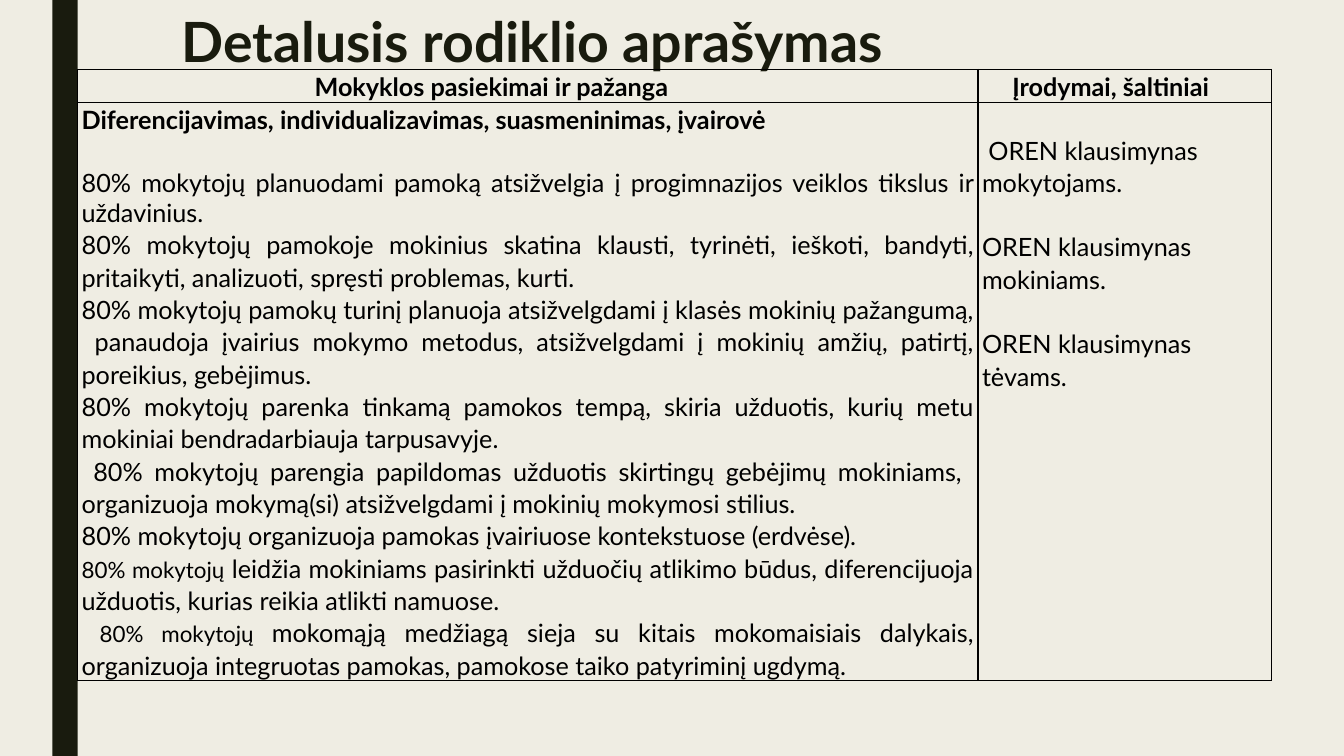
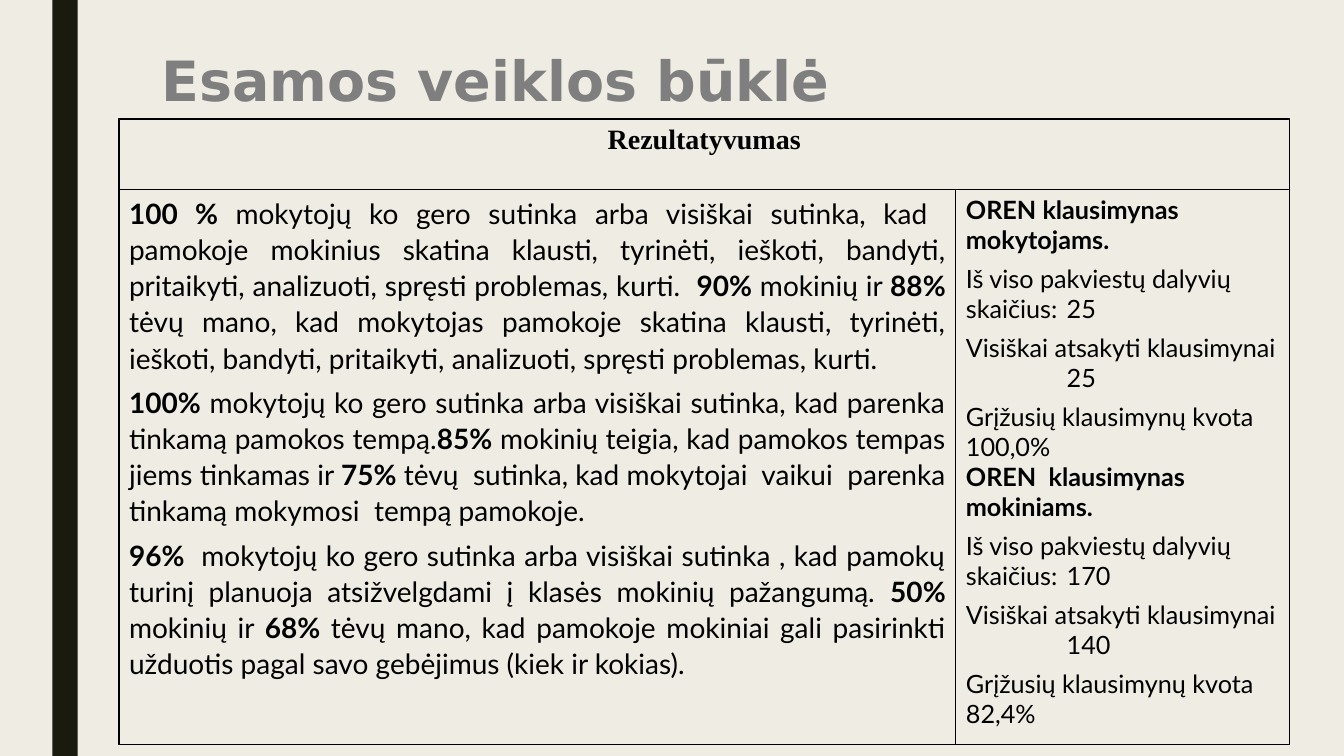
from pptx import Presentation
from pptx.dml.color import RGBColor
from pptx.enum.shapes import MSO_SHAPE
from pptx.enum.text import MSO_ANCHOR, PP_ALIGN
from pptx.oxml import parse_xml
from pptx.oxml.ns import nsdecls
from pptx.util import Inches, Pt

WIDE, HIGH = 13.33, 7.5
THEME = {
    "paper": RGBColor.from_string("EFEDE3"),
    "dark": RGBColor.from_string("191B0E"),
    "grey": RGBColor.from_string("7F7F7F"),
    "ink": RGBColor.from_string("000000"),
    "sans": "Lato",
    "title": Pt(39.6),
}
LEFT, MID, FULL = PP_ALIGN.LEFT, PP_ALIGN.CENTER, PP_ALIGN.JUSTIFY
BOLD, SMALL = {"bold": True}, {"size": Pt(16)}


def style(size, bold=False, alt=BOLD, face=THEME["sans"], align=LEFT, line=1.0, gap=0):
    font = {"name": face, "size": Pt(size), "bold": bold}
    para = {"alignment": align, "line_spacing": line, "space_before": Pt(gap)}
    return {"font": font, "para": para, "alt": alt}


STYLES = {
    "head": style(18, True, line=1.07),
    "goal": style(18, alt=SMALL, align=FULL, line=1.07),
    "first": style(18, align=FULL, gap=23),
    "proof": style(18, line=1.07),
    "next": style(18, line=1.07, gap=23),
    "band": style(20, True, face="Times New Roman", align=MID),
    "fact": style(20, align=FULL, line=1.07, gap=6),
    "lead": style(18, True, gap=6),
    "tight": style(18, True),
    "note": style(18, gap=6),
}


def survey(who, total, done, share):
    return who + [
        ("note", f"Iš viso pakviestų dalyvių skaičius: \t{total}"),
        ("note", f"Visiškai atsakyti klausimynai \t{done}"),
        ("note", f"Grįžusių klausimynų kvota \t{share}"),
    ]


SLIDES = [
    {
        "title": "Detalusis rodiklio aprašymas",
        "look": ("Lato", "dark"),
        "box": (1.7, 0.1, 10.5, 0.69),
        "at": (0.77, 0.69),
        "cols": (8.93, 2.91),
        "rows": (0.33, 5.71),
        "pad": (0.04, 0),
        "shift": {(0, 0): {"margin_left": 2.35}, (0, 1): {"margin_left": 0.34},
                  (1, 1): {"margin_top": 0.3}},
        "cells": [
            [[("head", "Mokyklos pasiekimai ir pažanga")],
             [("head", "Įrodymai, šaltiniai")]],
            [[
                ("head", "Diferencijavimas, individualizavimas, suasmeninimas, įvairovė"),
                ("first", "80% mokytojų planuodami pamoką atsižvelgia į progimnazijos veiklos tikslus ir uždavinius."),
                ("goal", "80% mokytojų pamokoje mokinius skatina klausti, tyrinėti, ieškoti, bandyti, pritaikyti, analizuoti, spręsti problemas, kurti."),
                ("goal", "80% mokytojų pamokų turinį planuoja atsižvelgdami į klasės mokinių pažangumą,  panaudoja įvairius mokymo metodus, atsižvelgdami į mokinių amžių, patirtį, poreikius, gebėjimus."),
                ("goal", "80% mokytojų parenka tinkamą pamokos tempą, skiria užduotis, kurių metu mokiniai bendradarbiauja tarpusavyje."),
                ("goal", " 80% mokytojų parengia papildomas užduotis skirtingų gebėjimų mokiniams,  organizuoja mokymą(si) atsižvelgdami į mokinių mokymosi stilius."),
                ("goal", "80% mokytojų organizuoja pamokas įvairiuose kontekstuose (erdvėse)."),
                ("goal", "*80% mokytojų* leidžia mokiniams pasirinkti užduočių atlikimo būdus, diferencijuoja užduotis, kurias reikia atlikti namuose."),
                ("goal", "* 80% mokytojų *mokomąją medžiagą sieja su kitais mokomaisiais dalykais, organizuoja integruotas pamokas, pamokose taiko patyriminį ugdymą."),
            ], [
                ("proof", " OREN klausimynas mokytojams."),
                ("next", "OREN klausimynas mokiniams."),
                ("next", "OREN klausimynas tėvams."),
            ]],
        ],
    },
    {
        "title": "Esamos veiklos būklė",
        "look": ("DejaVu Sans", "grey"),
        "box": (1.5, 0.49, 10.5, 0.79),
        "at": (1.18, 1.18),
        "cols": (8.3, 3.31),
        "rows": (0.7, 5.51),
        "pad": (0.1, 0.05),
        "shift": {},
        "cells": [
            [[("band", "Rezultatyvumas")], None],
            [[
                ("fact", "*100 % *mokytojų ko gero sutinka arba visiškai sutinka, kad  pamokoje mokinius skatina klausti, tyrinėti, ieškoti, bandyti, pritaikyti, analizuoti, spręsti problemas, kurti.  *90%* mokinių ir *88%* tėvų mano, kad mokytojas pamokoje skatina klausti, tyrinėti, ieškoti, bandyti, pritaikyti, analizuoti, spręsti problemas, kurti."),
                ("fact", "*100%* mokytojų ko gero sutinka arba visiškai sutinka, kad parenka tinkamą pamokos tempą.*85%* mokinių teigia, kad pamokos tempas jiems tinkamas ir *75%* tėvų  sutinka, kad mokytojai  vaikui  parenka tinkamą mokymosi  tempą pamokoje."),
                ("fact", "*96% * mokytojų ko gero sutinka arba visiškai sutinka , kad pamokų turinį planuoja atsižvelgdami į klasės mokinių pažangumą. *50%* mokinių ir *68% *tėvų mano, kad pamokoje mokiniai gali pasirinkti užduotis pagal savo gebėjimus (kiek ir kokias)."),
            ],
                survey([("lead", "OREN klausimynas mokytojams.")], 25, 25, "100,0%")
                + survey([("tight", "OREN  klausimynas"), ("tight", "mokiniams.")], 170, 140, "82,4%"),
            ],
        ],
    },
]


def apply(thing, values):
    for name, value in values.items():
        setattr(thing, name, value)


def write(frame, paras):
    for i, (kind, text) in enumerate(paras):
        look = STYLES[kind]
        para = frame.add_paragraph() if i else frame.paragraphs[0]
        apply(para, look["para"])
        if "\t" in text:
            para._p.get_or_add_pPr().append(parse_xml(
                f'<a:tabLst {nsdecls("a")}><a:tab pos="{Inches(1)}" algn="l"/></a:tabLst>'))
        for j, part in enumerate(text.split("*")):
            if part:
                run = para.add_run()
                run.text = part
                apply(run.font, look["font"] | (look["alt"] if j % 2 else {}))
                run.font.color.rgb = THEME["ink"]


def edge(cell):
    props = cell._tc.get_or_add_tcPr()
    for i, side in enumerate(("lnL", "lnR", "lnT", "lnB")):
        props.insert(i, parse_xml(
            f'<a:{side} {nsdecls("a")} w="{Pt(1)}"><a:solidFill>'
            f'<a:srgbClr val="{THEME["ink"]}"/></a:solidFill></a:{side}>'))


def head(slide, data):
    title = slide.shapes.title
    names = ("left", "top", "width", "height")
    apply(title, dict(zip(names, map(Inches, data["box"]))))
    frame = title.text_frame
    frame.text = data["title"]
    apply(frame, {"vertical_anchor": MSO_ANCHOR.TOP, "word_wrap": True})
    para = frame.paragraphs[0]
    apply(para, {"alignment": LEFT, "line_spacing": 0.89})
    face, tone = data["look"]
    apply(para.runs[0].font, {"name": face, "size": THEME["title"], "bold": True})
    para.runs[0].font.color.rgb = THEME[tone]


def grid(slide, data):
    cols, rows = data["cols"], data["rows"]
    size = (*data["at"], sum(cols), sum(rows))
    table = slide.shapes.add_table(len(rows), len(cols), *map(Inches, size)).table
    apply(table, {"first_row": False, "horz_banding": False})
    for col, width in zip(table.columns, cols):
        col.width = Inches(width)
    for row, height in zip(table.rows, rows):
        row.height = Inches(height)
    side, top = data["pad"]
    pad = {"margin_left": side, "margin_right": side, "margin_top": top, "margin_bottom": top}
    for r, line in enumerate(data["cells"]):
        for c, paras in enumerate(line):
            cell = table.cell(r, c)
            cell.fill.background()
            edge(cell)
            inset = pad | data["shift"].get((r, c), {})
            apply(cell, {name: Inches(value) for name, value in inset.items()})
            if paras is None:
                table.cell(r, c - 1).merge(cell)
            else:
                write(cell.text_frame, paras)


def dress(deck, slide):
    master = deck.slide_master
    master.background.fill.solid()
    master.background.fill.fore_color.rgb = THEME["paper"]
    bar = slide.shapes.add_shape(
        MSO_SHAPE.RECTANGLE, *map(Inches, (0.52, 0, 0.25, HIGH)))
    bar.shadow.inherit = False
    bar.fill.solid()
    bar.fill.fore_color.rgb = THEME["dark"]
    bar.line.fill.background()
    master.shapes.element.insert(2, bar.element)


def main():
    deck = Presentation()
    apply(deck, {"slide_width": Inches(WIDE), "slide_height": Inches(HIGH)})
    for i, data in enumerate(SLIDES):
        slide = deck.slides.add_slide(deck.slide_layouts[5])
        if i == 0:
            dress(deck, slide)
        head(slide, data)
        grid(slide, data)
    deck.save("out.pptx")


if __name__ == "__main__":
    main()
